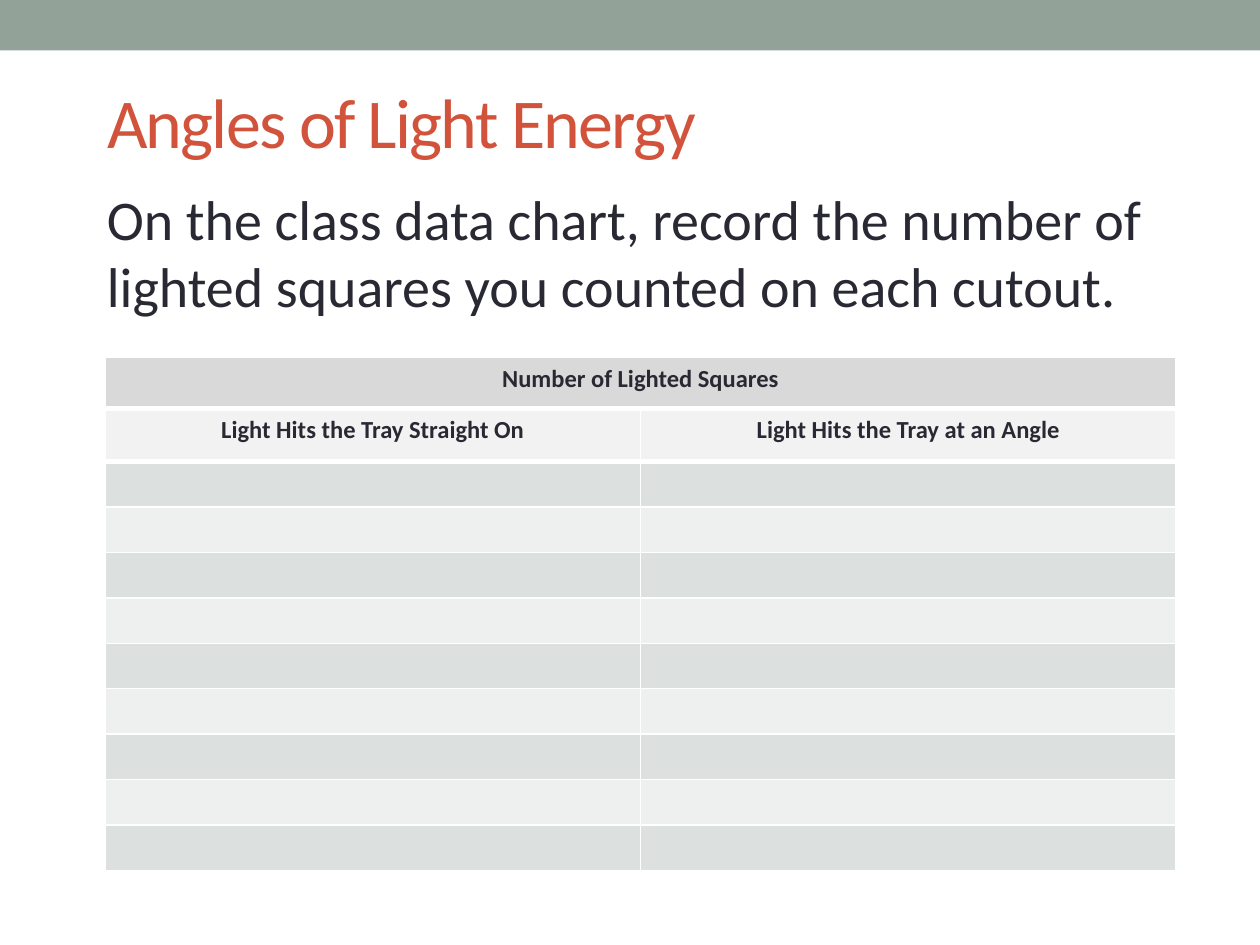
import pptx
import pptx.util
import pptx.dml.color
import pptx.enum.shapes
import pptx.enum.text
import pptx.oxml
import pptx.oxml.ns

COLS, ROWS = 120, 90
COLORS = {
    "bar": "93A299", "title": "D2533C", "text": "292934", "rule": "FFFFFF",
    "head": "D9D9D9", "subhead": "F2F2F2", "odd": "DCE0DE", "even": "EEF0EF",
}
FORMATS = {
    "title": {"size": pptx.util.Pt(40), "name": "Calibri", "bold": False},
    "body": {"size": pptx.util.Pt(32), "name": "Calibri"},
    "head": {"size": pptx.util.Pt(14), "name": "Calibri", "bold": True},
}
HEADINGS = [
    ["Number of Lighted Squares"],
    ["Light Hits the Tray Straight On", "Light Hits the Tray at an Angle"],
]
BODY_ROWS = 9
HEAD_HEIGHTS = [4.92, 5.04]
BODY_HEIGHT = 4.33


def rgb(key):
    return pptx.dml.color.RGBColor.from_string(COLORS[key])


def grid(prs, x, y, w, h):
    col, row = prs.slide_width / COLS, prs.slide_height / ROWS
    return [pptx.util.Emu(round(v)) for v in (x * col, y * row, w * col, h * row)]


def set_attrs(obj, values):
    for name, value in values.items():
        setattr(obj, name, value)


def write(tf, text, style, color):
    p = tf.paragraphs[0]
    r = p.add_run()
    r.text = text
    set_attrs(r.font, FORMATS[style])
    r.font.color.rgb = rgb(color)
    return p, r


def add_bar(prs, s):
    sp = s.shapes.add_shape(
        pptx.enum.shapes.MSO_SHAPE.RECTANGLE, *grid(prs, 0, 0, COLS, 4.8))
    sp.shadow.inherit = False
    sp.fill.solid()
    sp.fill.fore_color.rgb = rgb("bar")
    sp.line.fill.background()


def add_title(prs, s, text):
    sp = s.shapes.title
    box = grid(prs, 9, 6, 105, 11)
    set_attrs(sp, dict(zip(("left", "top", "width", "height"), box)))
    sp.text_frame.vertical_anchor = pptx.enum.text.MSO_ANCHOR.MIDDLE
    p, r = write(sp.text_frame, text, "title", "title")
    p.alignment = pptx.enum.text.PP_ALIGN.LEFT
    r.font._element.set("spc", "-100")


def add_instruction(prs, s, text):
    tf = s.shapes.add_textbox(*grid(prs, 9, 17, 107, 14.2)).text_frame
    set_attrs(tf, {"word_wrap": True,
                   "auto_size": pptx.enum.text.MSO_AUTO_SIZE.SHAPE_TO_FIT_TEXT})
    write(tf, text, "body", "text")


def set_borders(cell, top, bottom):
    tcPr = cell._tc.get_or_add_tcPr()
    for side, width in {"L": 1, "R": 1, "T": top, "B": bottom}.items():
        tcPr.append(pptx.oxml.parse_xml(
            f'<a:ln{side} {pptx.oxml.ns.nsdecls("a")} w="{pptx.util.Pt(width)}">'
            f'<a:solidFill><a:srgbClr val="{COLORS["rule"]}"/></a:solidFill>'
            f'</a:ln{side}>'))


def format_cell(cell, row):
    heads = len(HEADINGS)
    fill = ["head", "subhead"][row] if row < heads else ("odd", "even")[(row - heads) % 2]
    set_borders(cell, 3 if 0 < row <= heads else 1, 3 if row < heads else 1)
    cell.fill.solid()
    cell.fill.fore_color.rgb = rgb(fill)
    side, edge = pptx.util.Inches(0.04), pptx.util.Inches(0.02)
    set_attrs(cell, {"margin_left": side, "margin_right": side,
                     "margin_top": edge, "margin_bottom": edge})


def add_data_table(prs, s):
    heights = HEAD_HEIGHTS + [BODY_HEIGHT] * BODY_ROWS
    box = grid(prs, 10, 34, 102, sum(heights))
    table = s.shapes.add_table(len(heights), 2, *box).table
    for i, h in enumerate(heights):
        table.rows[i].height = grid(prs, 0, 0, 0, h)[3]
        for cell in table.rows[i].cells:
            format_cell(cell, i)
    table.cell(0, 0).merge(table.cell(0, 1))
    for i, texts in enumerate(HEADINGS):
        for j, text in enumerate(texts):
            p, r = write(table.cell(i, j).text_frame, text, "head", "text")
            set_attrs(p, {"alignment": pptx.enum.text.PP_ALIGN.CENTER,
                          "line_spacing": 1.15})


def main():
    prs = pptx.Presentation()
    set_attrs(prs, {"slide_width": pptx.util.Inches(10),
                    "slide_height": pptx.util.Inches(7.5)})
    s = prs.slides.add_slide(prs.slide_layouts[5])
    add_bar(prs, s)
    add_title(prs, s, "Angles of Light Energy")
    add_instruction(prs, s, "On the class data chart, record the number of "
                            "lighted squares you counted on each cutout.")
    add_data_table(prs, s)
    prs.save("out.pptx")


if __name__ == "__main__":
    main()
